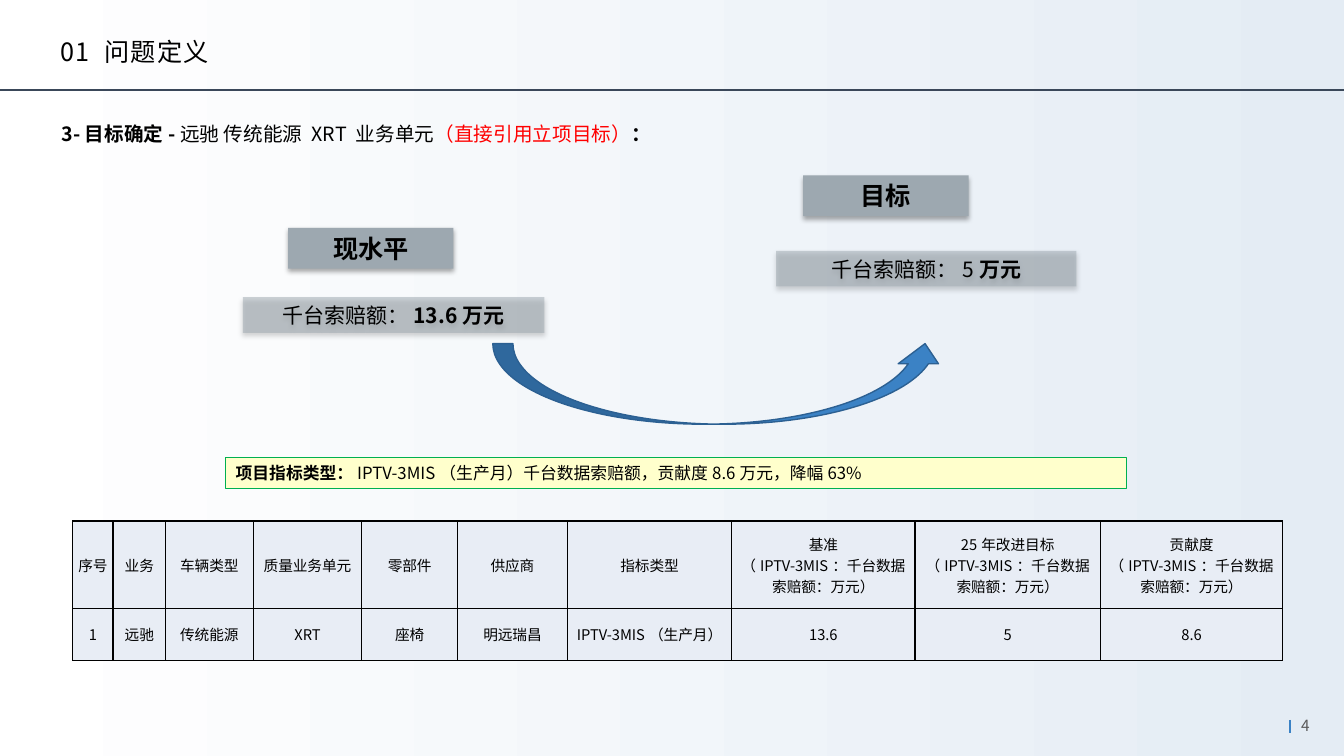
from lxml import etree
from pptx import Presentation
from pptx.dml.color import RGBColor
from pptx.enum.shapes import MSO_CONNECTOR, MSO_SHAPE
from pptx.enum.text import MSO_ANCHOR, MSO_AUTO_SIZE, PP_ALIGN
from pptx.oxml import parse_xml
from pptx.oxml.ns import nsdecls, qn
from pptx.util import Cm, Pt

STRAIGHT = MSO_CONNECTOR.STRAIGHT
RECTANGLE = MSO_SHAPE.RECTANGLE
CURVED_UP_ARROW = MSO_SHAPE.CURVED_UP_ARROW
LEFT, CENTER = PP_ALIGN.LEFT, PP_ALIGN.CENTER
TOP, MIDDLE = MSO_ANCHOR.TOP, MSO_ANCHOR.MIDDLE

WHITE = RGBColor(0xFF, 0xFF, 0xFF)
BLACK = RGBColor(0x00, 0x00, 0x00)
RED = RGBColor(0xFF, 0x00, 0x00)
GREEN = RGBColor(0x00, 0xB0, 0x50)
YELLOW = RGBColor(0xFF, 0xFF, 0xCC)
BLUE = RGBColor(0x3B, 0x82, 0xC5)
DARK_BLUE = RGBColor(0x2C, 0x60, 0x92)
PALE_BLUE = RGBColor(0xE4, 0xEC, 0xF4)
CELL_BLUE = RGBColor(0xE8, 0xED, 0xF5)
SLATE = RGBColor(0x3A, 0x47, 0x59)
STEEL = RGBColor(0x9D, 0xA8, 0xB0)
GRAY = RGBColor(0x59, 0x59, 0x59)

FONT = "Noto Sans CJK JP"
NUMBER_FONT = "Noto Sans CJK SC"

METRIC_NOTE = "\n（IPTV-3MIS：千台数据\n索赔额：万元）"
TARGET_ROWS = [
    ["序号", "业务", "车辆类型", "质量业务单元", "零部件", "供应商", "指标类型",
     "基准" + METRIC_NOTE, "25年改进目标" + METRIC_NOTE, "贡献度" + METRIC_NOTE],
    ["1", "远驰", "传统能源", "XRT", "座椅", "明远瑞昌", "IPTV-3MIS（生产月）",
     "13.6", "5", "8.6"],
]
COLUMN_WIDTHS = [1.02, 1.32, 2.21, 2.74, 2.41, 2.77, 4.14, 4.62, 4.67, 4.6]
ROW_HEIGHTS = [2.21, 1.3]


def write(frame, *runs, size, font=FONT, color=BLACK, bold=False, align=LEFT,
          line_spacing=None, tracking=None):
    """Fill the first paragraph; a run is a string or (string, format changes)."""
    paragraph = frame.paragraphs[0]
    paragraph.alignment = align
    paragraph.space_before = Pt(0)
    if line_spacing:
        paragraph.line_spacing = line_spacing
    for item in runs:
        text, changes = (item, {}) if isinstance(item, str) else item
        for index, line in enumerate(text.split("\n")):
            if index:
                paragraph.add_line_break()
            run = paragraph.add_run()
            run.text = line
            run.font.size = Pt(size)
            run.font.name = font
            run.font.bold = changes.get("bold", bold)
            run.font.color.rgb = changes.get("color", color)
            properties = run.font._element
            properties.set("lang", "zh-CN")
            if tracking:
                properties.set("spc", str(tracking * 100))
            etree.SubElement(properties, qn("a:ea")).set("typeface", font)


def set_frame(frame, anchor=MIDDLE, side=0, vertical=0):
    frame.word_wrap = True
    frame.auto_size = MSO_AUTO_SIZE.NONE
    frame.vertical_anchor = anchor
    frame.margin_left = frame.margin_right = Cm(side)
    frame.margin_top = frame.margin_bottom = Cm(vertical)
    return frame


def add_text(slide, left, top, width, height, *runs, anchor=TOP, side=0, **style):
    box = slide.shapes.add_textbox(Cm(left), Cm(top), Cm(width), Cm(height))
    write(set_frame(box.text_frame, anchor, side), *runs, **style)


def add_block(slide, kind, left, top, width, height, fill, line=None, weight=1):
    block = slide.shapes.add_shape(kind, Cm(left), Cm(top), Cm(width), Cm(height))
    block.shadow.inherit = False
    block.fill.solid()
    block.fill.fore_color.rgb = fill
    if line is None:
        block.line.fill.background()
    else:
        block.line.color.rgb = line
        block.line.width = Pt(weight)
    return block


def add_label(slide, left, top, width, height, *runs, opacity=100, **style):
    """Add a grey box with centred text and a soft shadow below it."""
    label = add_block(slide, RECTANGLE, left, top, width, height, STEEL)
    properties = label._element.spPr
    if opacity < 100:
        tint = properties.find(qn("a:solidFill"))[0]
        etree.SubElement(tint, qn("a:alpha")).set("val", str(opacity * 1000))
    properties.find(qn("a:effectLst")).append(parse_xml(
        f'<a:outerShdw {nsdecls("a")} blurRad="{Pt(3.5)}" dist="{Pt(2.2)}" '
        'dir="5400000" algn="t" rotWithShape="0"><a:srgbClr val="000000">'
        '<a:alpha val="32000"/></a:srgbClr></a:outerShdw>'))
    write(set_frame(label.text_frame), *runs, align=CENTER, **style)


def add_rule(slide, x1, y1, x2, y2, color, weight):
    rule = slide.shapes.add_connector(STRAIGHT, Cm(x1), Cm(y1), Cm(x2), Cm(y2))
    rule.line.color.rgb = color
    rule.line.width = Pt(weight)
    etree.SubElement(rule._element.spPr, qn("a:effectLst"))


def add_borders(cell):
    properties = cell._tc.get_or_add_tcPr()
    for side in ("lnL", "lnR", "lnT", "lnB"):
        properties.append(parse_xml(
            f'<a:{side} {nsdecls("a")} w="{Pt(1)}"><a:solidFill>'
            f'<a:srgbClr val="{BLACK}"/></a:solidFill></a:{side}>'))


def add_target_table(slide, left, top):
    table = slide.shapes.add_table(
        len(ROW_HEIGHTS), len(COLUMN_WIDTHS), Cm(left), Cm(top),
        Cm(sum(COLUMN_WIDTHS)), Cm(sum(ROW_HEIGHTS))).table
    table.horz_banding = False
    for column, width in zip(table.columns, COLUMN_WIDTHS):
        column.width = Cm(width)
    for row, height, texts in zip(table.rows, ROW_HEIGHTS, TARGET_ROWS):
        row.height = Cm(height)
        for cell, text in zip(row.cells, texts):
            add_borders(cell)
            cell.fill.solid()
            cell.fill.fore_color.rgb = CELL_BLUE
            cell.vertical_anchor = MIDDLE
            cell.margin_left = cell.margin_right = 0
            cell.margin_top = cell.margin_bottom = 0
            write(cell.text_frame, text, size=10.5, align=CENTER)


def set_background(slide):
    fill = slide.background.fill
    fill.gradient()
    fill.gradient_angle = 0
    for stop, color, position in zip(fill.gradient_stops, (WHITE, PALE_BLUE), (0, 1)):
        stop.color.rgb = color
        stop.position = position


def set_title(slide, text):
    title = slide.shapes.title
    title.left, title.top, title.width, title.height = Cm(1.52), Cm(0.74), Cm(27.05), Cm(1.19)
    write(set_frame(title.text_frame), text, size=18, line_spacing=0.9, tracking=1)


def main():
    deck = Presentation()
    deck.slide_width, deck.slide_height = Cm(33.87), Cm(19.05)
    slide = deck.slides.add_slide(deck.slide_layouts[5])

    set_background(slide)
    set_title(slide, "01 问题定义")
    add_rule(slide, 0, 2.27, 33.87, 2.27, SLATE, 1.5)
    add_text(slide, 1.55, 2.77, 30.76, 1.2, ("3-目标确定-", {"bold": True}),
             "远驰 传统能源 XRT 业务单元", ("（直接引用立项目标）", {"color": RED}),
             ("：", {"bold": True}), size=14, line_spacing=1.5)

    add_label(slide, 7.26, 5.74, 4.17, 1.03, "现水平", size=18, bold=True)
    add_label(slide, 6.12, 7.49, 7.6, 0.9, "千台索赔额：", ("13.6万元", {"bold": True}),
              size=15, opacity=50)
    add_label(slide, 20.24, 4.42, 4.17, 1.03, "目标", size=18, bold=True)
    add_label(slide, 19.56, 6.32, 7.57, 0.9, "千台索赔额：5", ("万元", {"bold": True}),
              size=15, opacity=50)
    add_block(slide, CURVED_UP_ARROW, 12.42, 8.66, 11.4, 2.03, BLUE, DARK_BLUE)

    indicator = add_block(slide, RECTANGLE, 5.69, 11.53, 22.7, 0.77, YELLOW, GREEN, 0.75)
    write(set_frame(indicator.text_frame, side=0.25), ("项目指标类型：", {"bold": True}),
          "IPTV-3MIS（生产月）千台数据索赔额，贡献度8.6万元，降幅63%", size=12)
    add_target_table(slide, 1.83, 13.13)

    add_rule(slide, 32.51, 18.14, 32.51, 18.47, BLUE, 1)
    add_text(slide, 32.54, 17.96, 1.3, 0.64, "4", size=11, font=NUMBER_FONT,
             color=GRAY, anchor=MIDDLE, side=0.25)
    deck.save("out.pptx")


if __name__ == "__main__":
    main()
